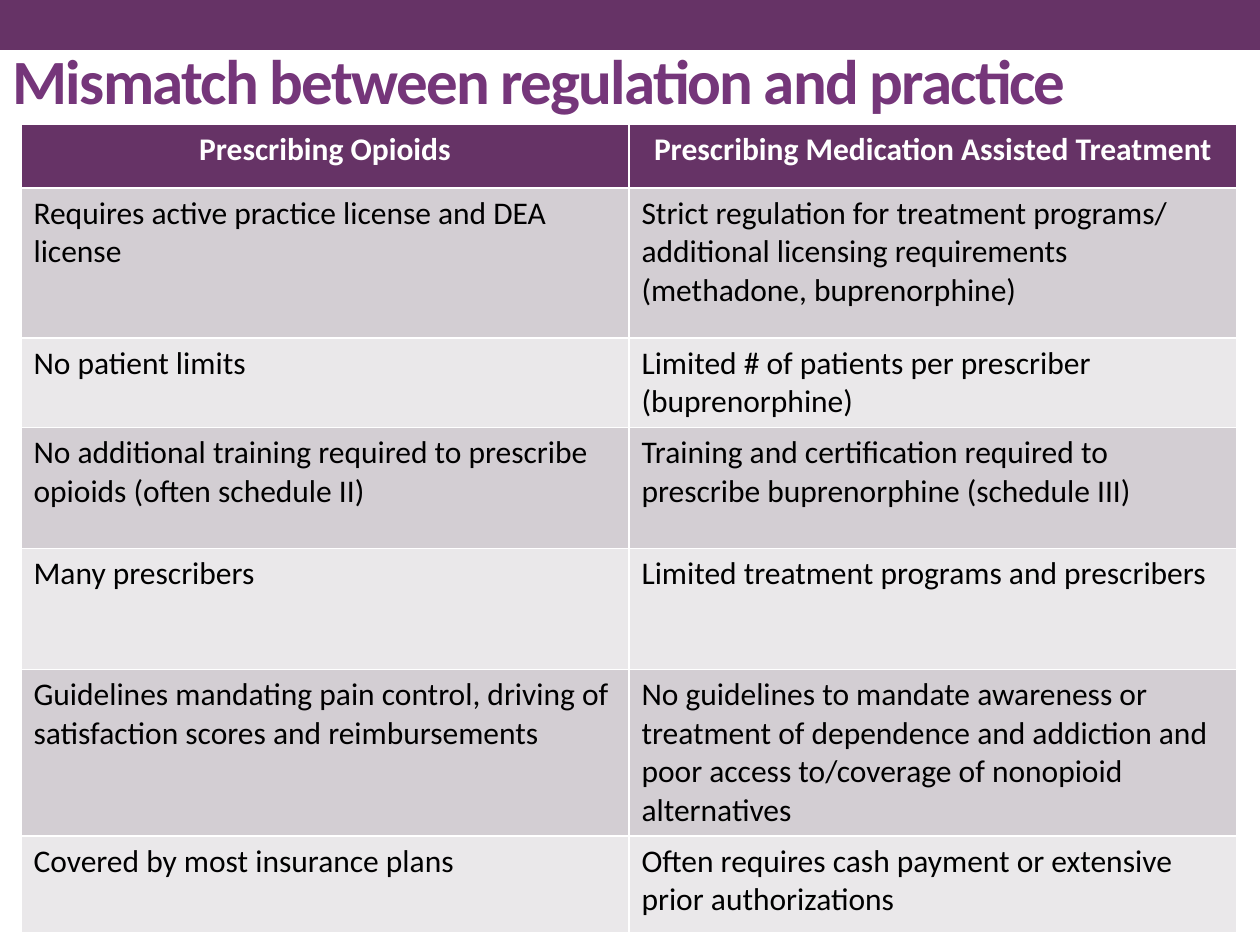
from pptx import Presentation
from pptx import util as u
from pptx.dml.color import RGBColor
from pptx.enum import shapes, text

TITLE = "Mismatch between regulation and practice"
ROWS = [
    ("Prescribing Opioids", "Prescribing Medication Assisted Treatment"),
    ("Requires active practice license and DEA license",
     "Strict regulation for treatment programs/ additional licensing requirements "
     "(methadone, buprenorphine)"),
    ("No patient limits", "Limited # of patients per prescriber (buprenorphine)"),
    ("No additional training required to prescribe opioids (often schedule II)",
     "Training and certification required to prescribe buprenorphine (schedule III)"),
    ("Many prescribers", "Limited treatment programs and prescribers"),
    ("Guidelines mandating pain control, driving of satisfaction scores and reimbursements",
     "No guidelines to mandate awareness or treatment of dependence and addiction "
     "and poor access to/coverage of nonopioid alternatives"),
    ("Covered by most insurance plans",
     "Often requires cash payment or extensive prior authorizations"),
]
ROW_HEIGHTS = [64, 150, 81, 121, 121, 121, 97]
COLUMN_WIDTH = 608

PLUM = RGBColor(0x66, 0x33, 0x66)
PURPLE = RGBColor(0x75, 0x36, 0x7A)
WHITE = RGBColor(0xFF, 0xFF, 0xFF)
BLACK = RGBColor(0, 0, 0)
BANDS = [RGBColor(0xEA, 0xE8, 0xEA), RGBColor(0xD3, 0xCE, 0xD3)]


def px(count):
    return u.Emu(round(count * 914400 / 126))


def write(frame, words, size=18, color=BLACK, bold=False,
          align=text.PP_ALIGN.LEFT, spacing=None):
    para = frame.paragraphs[0]
    para.alignment = align
    span = para.add_run()
    span.text = words
    span.font.name = "Calibri"
    span.font.size = u.Pt(size)
    span.font.bold = bold
    span.font.color.rgb = color
    if spacing is not None:
        span.font._element.set("spc", str(spacing * 100))


deck = Presentation()
deck.slide_width, deck.slide_height = px(1260), px(945)
page = deck.slides.add_slide(deck.slide_layouts[5])

bar = page.shapes.add_shape(shapes.MSO_SHAPE.RECTANGLE, 0, 0, px(1260), px(50))
bar.shadow.inherit = False
bar.fill.solid()
bar.fill.fore_color.rgb = PLUM
bar.line.fill.background()
page.shapes._spTree.insert(2, bar._element)

title = page.shapes.title
title.left, title.top, title.width, title.height = px(0), px(11), px(1115), px(136)
title.text_frame.vertical_anchor = text.MSO_ANCHOR.MIDDLE
write(title.text_frame, TITLE, size=36, color=PURPLE, bold=True, spacing=-1)

table = page.shapes.add_table(len(ROWS), 2, px(21), px(124),
                              px(2 * COLUMN_WIDTH), px(sum(ROW_HEIGHTS))).table
for column in table.columns:
    column.width = px(COLUMN_WIDTH)
for index, (row, height, entries) in enumerate(zip(table.rows, ROW_HEIGHTS, ROWS)):
    row.height = px(height)
    header = index == 0
    for cell, words in zip(row.cells, entries):
        cell.fill.solid()
        cell.fill.fore_color.rgb = PLUM if header else BANDS[index % 2]
        write(cell.text_frame, words, color=WHITE if header else BLACK, bold=header,
              align=text.PP_ALIGN.CENTER if header else text.PP_ALIGN.LEFT)

deck.save("out.pptx")
